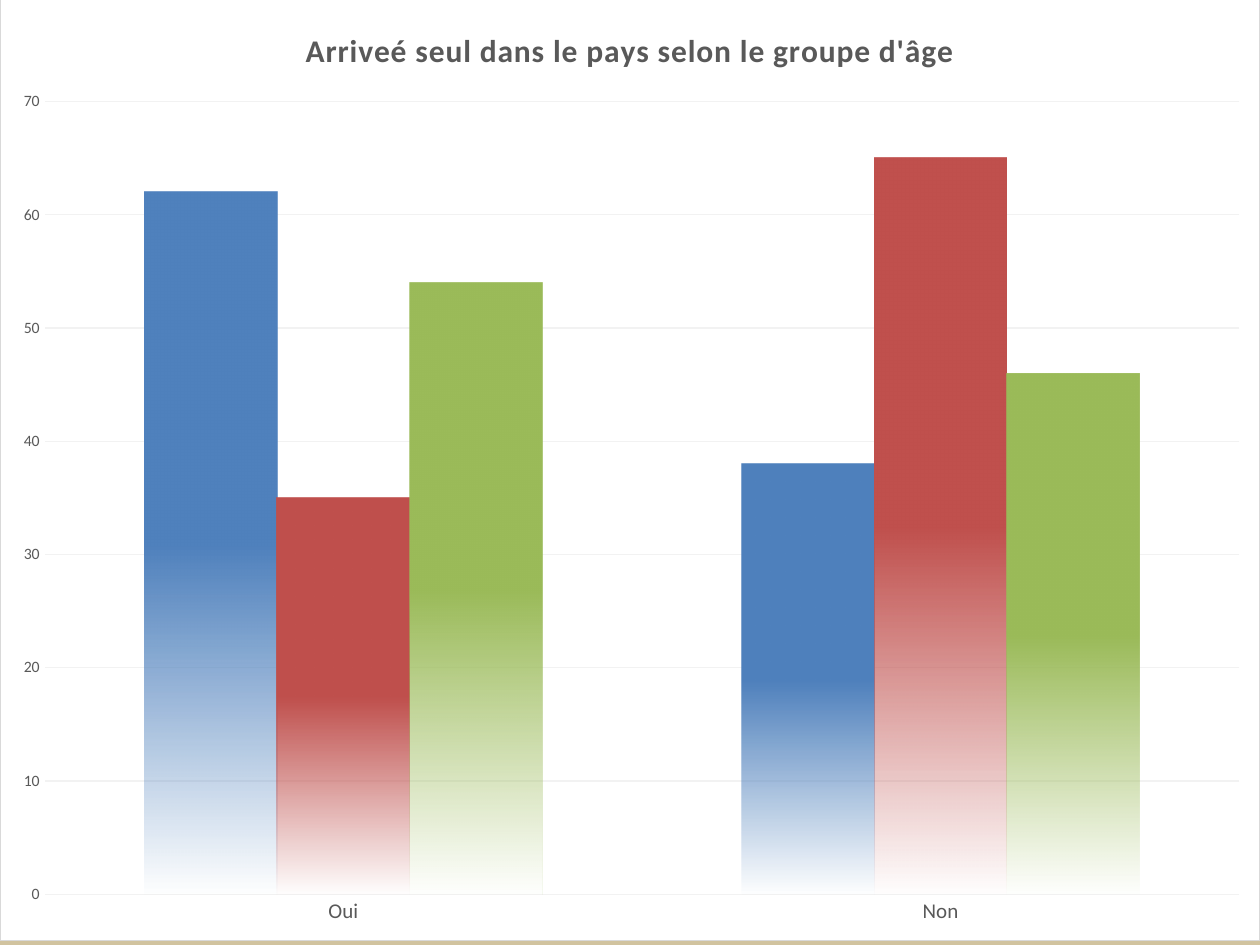
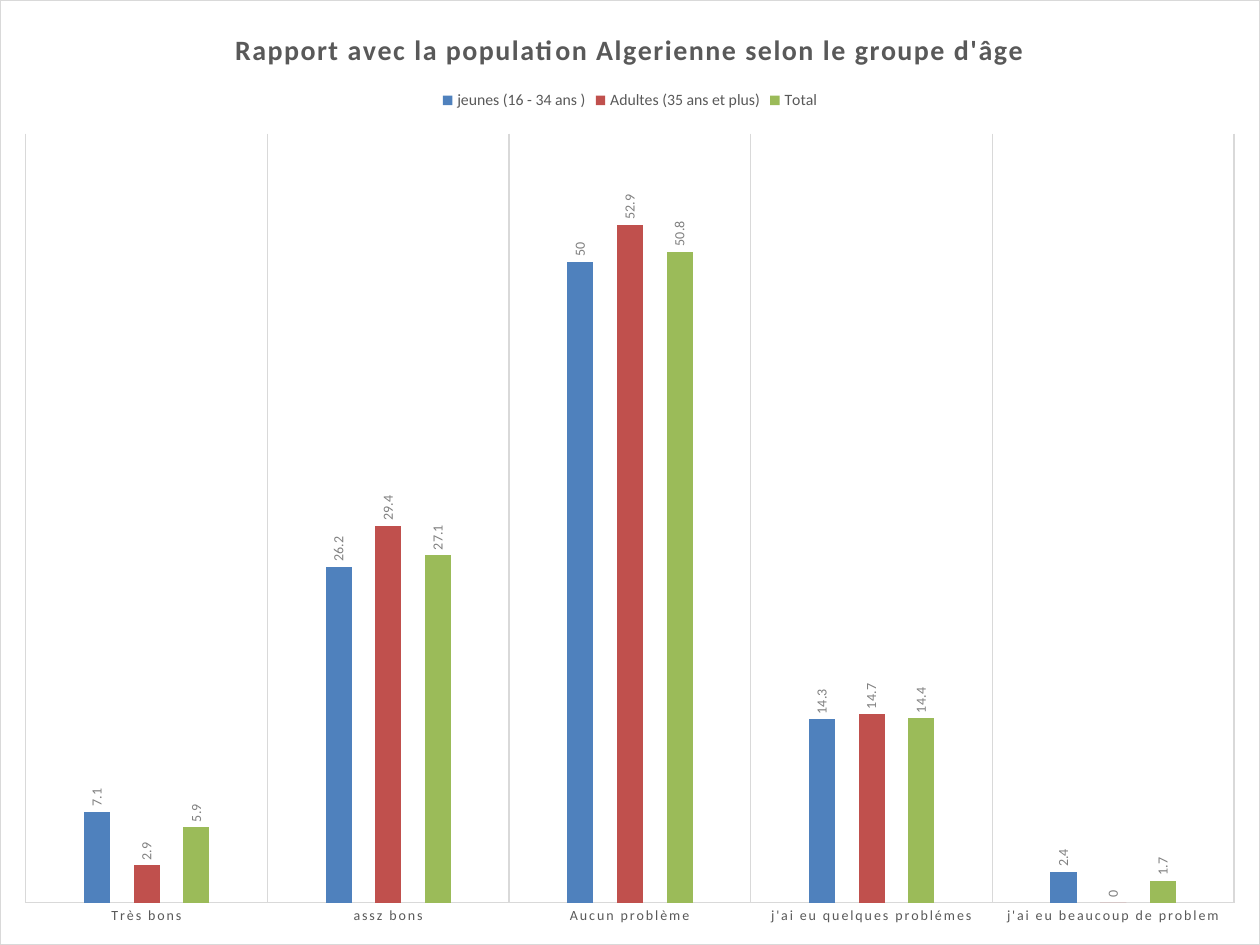
"""Build two slides, each filled by a clustered column chart by age group."""
from lxml.etree import SubElement
from pptx import Presentation
from pptx.chart.data import CategoryChartData
from pptx.dml.color import RGBColor
from pptx.enum.chart import XL_CHART_TYPE, XL_LABEL_POSITION, XL_LEGEND_POSITION, XL_TICK_MARK
from pptx.oxml import parse_xml
from pptx.oxml.ns import nsdecls, qn
from pptx.util import Inches, Pt

FONT = "Calibri"
TEXT, LABEL, RULE, PALE_RULE = "595959", "808080", "D9D9D9", "F2F2F2"
SERIES_COLOURS = ["4F81BD", "C0504D", "9BBB59"]
BACKGROUND_STOPS = [(0, "FFEFD1", 100), (65, "F0EBD5", 100), (100, "D1C39F", 100)]

CHARTS = [
    {
        "title": "Arriveé seul dans le pays selon le groupe d'âge",
        "title_size": 18, "title_spacing": 50, "top": -0.03,
        "categories": ["Oui", "Non"], "category_size": 12, "category_spacing": 0,
        "series": {
            "Jeunes (16-34)": [62, 38],
            "Series 2Adultes (35 ans et plus)": [35, 65],
            "Total": [54, 46],
        },
        "gap": 150, "overlap": 0, "maximum": 70, "faded": True,
        "plot": (0.035, 0.111, 0.949, 0.84),
    },
    {
        "title": "Rapport avec la population Algerienne selon le groupe d'âge",
        "title_size": 16, "title_spacing": 100, "top": 0,
        "categories": ["Très bons", "assz bons", "Aucun problème",
                       "j'ai eu quelques problémes", "j'ai eu beaucoup de problem"],
        "category_size": 8, "category_spacing": 100,
        "series": {
            "jeunes (16 - 34 ans )": [7.1, 26.2, 50, 14.3, 2.4],
            "Adultes (35 ans et plus)": [2.9, 29.4, 52.9, 14.7, 0],
            "Total": [5.9, 27.1, 50.8, 14.4, 1.7],
        },
        "gap": 444, "overlap": -90, "maximum": 60, "faded": False,
        "plot": (0.02, 0.141, 0.96, 0.815),
    },
]


def style_font(font, size, colour, bold=False):
    font.name, font.size, font.bold = FONT, Pt(size), bold
    font.color.rgb = RGBColor.from_string(colour)


def set_gradient(fill, properties, stops):
    fill.solid()
    gradient = parse_xml(f'<a:gradFill {nsdecls("a")} rotWithShape="1"><a:gsLst/>'
                         '<a:lin ang="5400000" scaled="0"/></a:gradFill>')
    for position, colour, opacity in stops:
        stop = SubElement(gradient[0], qn("a:gs"), pos=str(position * 1000))
        shade = SubElement(stop, qn("a:srgbClr"), val=colour)
        if opacity < 100:
            SubElement(shade, qn("a:alpha"), val=str(opacity * 1000))
    solid = properties.find(".//" + qn("a:solidFill"))
    solid.getparent().replace(solid, gradient)


presentation = Presentation()
presentation.slide_width, presentation.slide_height = Inches(10), Inches(7.5)

for settings in CHARTS:
    slide = presentation.slides.add_slide(presentation.slide_layouts[6])
    set_gradient(slide.background.fill, slide.element.find(".//" + qn("p:bgPr")), BACKGROUND_STOPS)

    data = CategoryChartData()
    data.categories = settings["categories"]
    for name, values in settings["series"].items():
        data.add_series(name, values)
    chart = slide.shapes.add_chart(
        XL_CHART_TYPE.COLUMN_CLUSTERED, 0, Inches(settings["top"]),
        presentation.slide_width, presentation.slide_height, data).chart
    style_font(chart.font, 10, "000000")

    chart_space = chart._chartSpace
    chart_space.find(qn("c:chart")).addnext(parse_xml(
        f'<c:spPr {nsdecls("c", "a")}><a:solidFill><a:srgbClr val="FFFFFF"/></a:solidFill>'
        f'<a:ln w="9525"><a:solidFill><a:srgbClr val="{RULE}"/></a:solidFill></a:ln></c:spPr>'))

    chart.has_title = True
    title = chart.chart_title.text_frame
    title.text = settings["title"]
    title_run = title.paragraphs[0].runs[0]
    style_font(title_run.font, settings["title_size"], TEXT, bold=True)
    title_run.font._element.set("spc", str(settings["title_spacing"]))
    chart.chart_title.include_in_layout = False

    plot_area = chart_space.find(".//" + qn("c:plotArea"))
    for automatic_layout in plot_area.findall(qn("c:layout")):
        plot_area.remove(automatic_layout)
    layout = parse_xml(f'<c:layout {nsdecls("c")}><c:manualLayout><c:layoutTarget val="inner"/>'
                       '<c:xMode val="edge"/><c:yMode val="edge"/></c:manualLayout></c:layout>')
    for side, share in zip("xywh", settings["plot"]):
        SubElement(layout[0], qn(f"c:{side}"), val=str(share))
    plot_area.insert(0, layout)

    category_axis, value_axis = chart.category_axis, chart.value_axis
    for axis, size in ((category_axis, settings["category_size"]), (value_axis, 9)):
        axis.major_tick_mark = axis.minor_tick_mark = XL_TICK_MARK.NONE
        style_font(axis.tick_labels.font, size, TEXT)
        axis.format.line.fill.background()
    category_axis.tick_labels.font._element.set("spc", str(settings["category_spacing"]))
    value_axis.minimum_scale, value_axis.maximum_scale = 0, settings["maximum"]
    value_axis.major_unit = 10

    plot = chart.plots[0]
    plot.gap_width, plot.overlap = settings["gap"], settings["overlap"]
    plot.vary_by_categories = False

    if settings["faded"]:
        chart.has_legend = False
        gridlines, grid_colour = value_axis.major_gridlines, PALE_RULE
    else:
        chart.has_legend = True
        chart.legend.position = XL_LEGEND_POSITION.TOP
        chart.legend.include_in_layout = False
        style_font(chart.legend.font, 9, TEXT)
        value_axis.has_major_gridlines = False
        value_axis.visible = False
        category_axis.has_major_gridlines = True
        category_axis.format.line.color.rgb = RGBColor.from_string(RULE)
        category_axis.format.line.width = Pt(0.75)
        gridlines, grid_colour = category_axis.major_gridlines, RULE
    gridlines.format.line.color.rgb = RGBColor.from_string(grid_colour)
    gridlines.format.line.width = Pt(0.75)

    for series, colour in zip(plot.series, SERIES_COLOURS):
        series.invert_if_negative = False
        fill = series.format.fill
        if settings["faded"]:
            set_gradient(fill, series._element, [(50, colour, 100), (100, colour, 0)])
        else:
            fill.solid()
            fill.fore_color.rgb = RGBColor.from_string(colour)
            labels = series.data_labels
            labels.show_value = True
            labels.position = XL_LABEL_POSITION.OUTSIDE_END
            style_font(labels.font, 8, LABEL)
            text_body = labels._element.find(qn("c:txPr")).find(qn("a:bodyPr"))
            text_body.set("rot", "-5400000")
            text_body.set("vert", "horz")

presentation.save("out.pptx")
